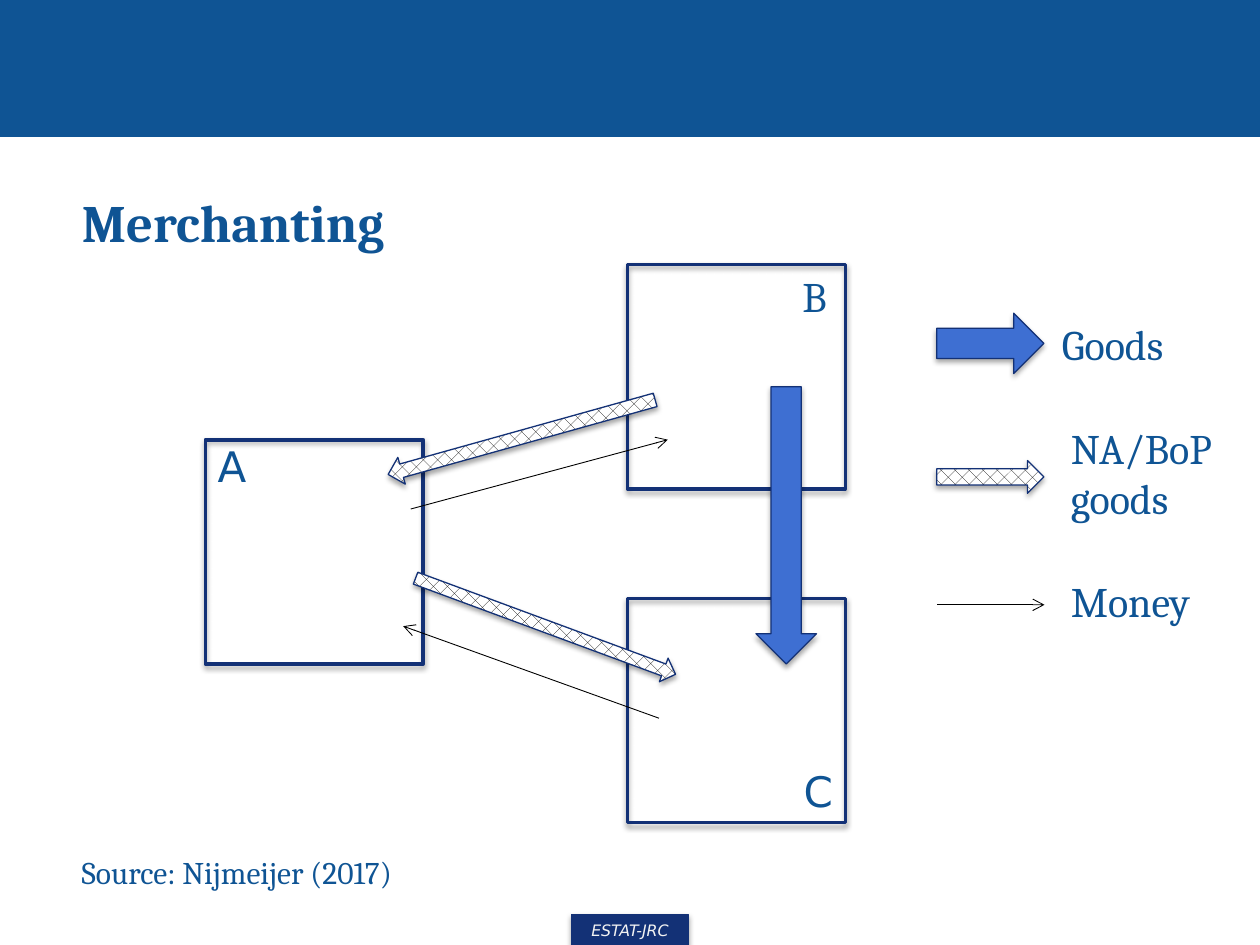
"""Build the merchanting slide: goods and money flows between A, B and C."""
from typing import NamedTuple, Optional

from lxml.etree import SubElement
from pptx import Presentation
from pptx.dml.color import RGBColor
from pptx.enum.dml import MSO_PATTERN as Pattern
from pptx.enum.shapes import MSO_CONNECTOR as Connector, MSO_SHAPE as Preset
from pptx.enum.text import MSO_ANCHOR as Anchor, MSO_AUTO_SIZE as AutoSize, PP_ALIGN as Align
from pptx.oxml.ns import qn
from pptx.util import Inches, Pt

WIDTH, HEIGHT = Inches(10), Inches(7.5)
COLUMN, ROW = WIDTH / 100, HEIGHT / 75
COLORS = {"blue": "0F5494", "navy": "133176", "goods": "3E6FD2",
          "black": "000000", "white": "FFFFFF", "pale": "F2F2F2"}
SERIF, SANS = "Cambria", "DejaVu Sans"
COUNTRY_SIZE = (17.3, 17.8)


class Area(NamedTuple):
    """A place on the grid of 100 columns by 75 rows."""
    left: float
    top: float
    width: float
    height: float


class Block(NamedTuple):
    """A preset shape; a fill named hatch is a pattern."""
    area: Area
    fill: Optional[str] = None
    preset: Preset = Preset.DOWN_ARROW
    rotation: float = 0
    line: str = "navy"
    weight: float = 0.75
    shadow: bool = True


class Money(NamedTuple):
    """A thin arrow from one grid point to another."""
    start: tuple
    end: tuple


class Label(NamedTuple):
    """A text box with one paragraph per line."""
    area: Area
    lines: tuple
    font: str = SERIF
    size: float = 24


BANNER = Block(Area(0, 0, 100, 10.8), "blue", Preset.RECTANGLE, line="blue", shadow=False)
BADGE = Block(Area(45.35, 72.6, 9.3, 2.4), "navy", Preset.RECTANGLE)
TITLE_AREA = Area(5.5, 12.5, 90, 10.2)
COUNTRIES = [Block(Area(left, top, *COUNTRY_SIZE), None, Preset.RECTANGLE, weight=2)
             for left, top in ((16.3, 34.9), (49.8, 21), (49.8, 47.5))]
FLOWS = [
    Block(Area(60, 30.7, 4.8, 22), "goods"),
    Block(Area(40.3, 23.7, 2.2, 22), "hatch", rotation=74.4),
    Block(Area(42.3, 38.7, 2, 22), "hatch", rotation=290.3),
    Block(Area(77.3, 33.6, 2.6, 8.5), "hatch", rotation=270),
    Block(Area(76.2, 23, 4.8, 8.5), "goods", rotation=270),
]
PAYMENTS = [
    Money((32.6, 40.4), (53, 34.9)),
    Money((52.3, 57), (32, 49.7)),
    Money((74.4, 48), (82.9, 48)),
]
LABELS = [
    Label(Area(83.3, 24.8, 11.5, 5), ("Goods",)),
    Label(Area(84, 45.2, 12.2, 5), ("Money",)),
    Label(Area(84, 33, 14.8, 9.1), ("NA/BoP", "goods")),
    Label(Area(16.3, 34.5, 4.3, 5), ("A",), SANS),
    Label(Area(62.7, 21, 4.3, 5), ("B",)),
    Label(Area(62.8, 60.3, 4.4, 5), ("C",), SANS),
    Label(Area(5.5, 67.2, 29.5, 4), ("Source: Nijmeijer (2017)",), size=18),
]


def color(name: str) -> RGBColor:
    """Look up a colour by name."""
    return RGBColor.from_string(COLORS[name])


def place(area: Area) -> tuple:
    """Turn grid units into slide lengths."""
    return tuple(round(value * unit) for value, unit in zip(area, (COLUMN, ROW) * 2))


def write(para, text: str, tint: str = "blue", **formats) -> None:
    """Add a formatted run to a paragraph."""
    span = para.add_run()
    span.text = text
    for key, value in formats.items():
        setattr(span.font, key, value)
    span.font.color.rgb = color(tint)


def add_shadow(shape) -> None:
    """Give a shape a soft shadow straight below it."""
    effects = shape.element.spPr.find(qn("a:effectLst"))
    shadow = SubElement(effects, qn("a:outerShdw"), blurRad=str(Pt(3.1)), dist=str(Pt(1.8)),
                        dir="5400000", rotWithShape="0")
    tint = SubElement(shadow, qn("a:srgbClr"), val=COLORS["black"])
    SubElement(tint, qn("a:alpha"), val="35000")


def draw_block(page, block: Block):
    """Draw a preset shape with its fill, line and shadow."""
    shape = page.shapes.add_shape(block.preset, *place(block.area))
    shape.rotation = block.rotation
    if block.fill == "hatch":
        shape.fill.patterned()
        shape.fill.pattern = Pattern.PERCENT_25
        shape.fill.fore_color.rgb = color("black")
        shape.fill.back_color.rgb = color("white")
    elif block.fill:
        shape.fill.solid()
        shape.fill.fore_color.rgb = color(block.fill)
    else:
        shape.fill.background()
    shape.line.color.rgb = color(block.line)
    shape.line.width = Pt(block.weight)
    shape.shadow.inherit = False
    if block.shadow:
        add_shadow(shape)
    return shape


def draw_money(page, money: Money) -> None:
    """Draw a thin line with an open arrowhead at its end."""
    ends = place(Area(*money.start, *money.end))
    arrow = page.shapes.add_connector(Connector.STRAIGHT, *ends)
    arrow.line.color.rgb = color("black")
    arrow.line.width = Pt(0.5)
    properties = arrow.element.spPr
    SubElement(properties.find(qn("a:ln")), qn("a:tailEnd"), type="arrow")
    SubElement(properties, qn("a:effectLst"))


def draw_label(page, label: Label) -> None:
    """Draw a text box that fits its lines."""
    frame = page.shapes.add_textbox(*place(label.area)).text_frame
    frame.word_wrap = False
    frame.auto_size = AutoSize.SHAPE_TO_FIT_TEXT
    for index, line in enumerate(label.lines):
        para = frame.add_paragraph() if index else frame.paragraphs[0]
        write(para, line, name=label.font, size=Pt(label.size))


def draw_title(page) -> None:
    """Place and format the title placeholder."""
    title = page.shapes.title
    title.left, title.top, title.width, title.height = place(TITLE_AREA)
    frame = title.text_frame
    frame.auto_size = AutoSize.NONE
    frame.vertical_anchor = Anchor.MIDDLE
    para = frame.paragraphs[0]
    para.alignment = Align.LEFT
    write(para, "Merchanting", name=SERIF, size=Pt(30), bold=True)


def draw_badge(page) -> None:
    """Draw the small footer badge."""
    frame = draw_block(page, BADGE).text_frame
    frame.word_wrap = False
    frame.vertical_anchor = Anchor.MIDDLE
    para = frame.paragraphs[0]
    para.alignment = Align.CENTER
    write(para, "ESTAT-JRC", "pale", name=SANS, size=Pt(9), italic=True)


def main() -> None:
    """Build and save the deck."""
    deck = Presentation()
    deck.slide_width, deck.slide_height = WIDTH, HEIGHT
    page = deck.slides.add_slide(deck.slide_layouts.get_by_name("Title Only"))
    draw_block(page, BANNER)
    draw_badge(page)
    draw_title(page)
    for block in COUNTRIES + FLOWS:
        draw_block(page, block)
    for money in PAYMENTS:
        draw_money(page, money)
    for label in LABELS:
        draw_label(page, label)
    deck.save("out.pptx")


if __name__ == "__main__":
    main()
